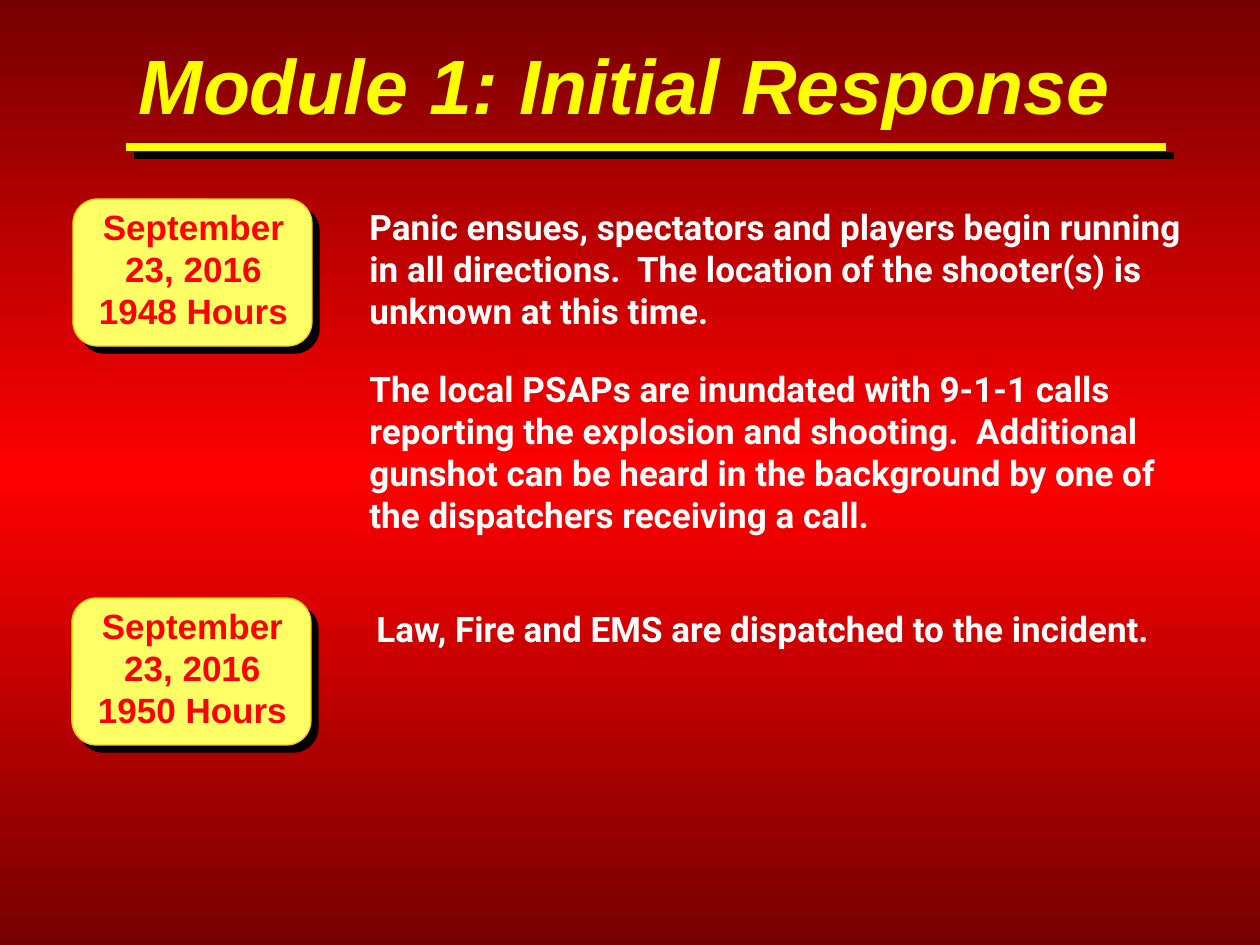
from copy import deepcopy

from lxml import etree
from pptx import Presentation
from pptx.dml.color import RGBColor
from pptx.enum.shapes import MSO_CONNECTOR, MSO_SHAPE
from pptx.enum.text import MSO_AUTO_SIZE, PP_ALIGN
from pptx.oxml.ns import qn
from pptx.util import Pt

LINE = MSO_CONNECTOR.STRAIGHT
ROUND = MSO_SHAPE.ROUNDED_RECTANGLE
GROW = MSO_AUTO_SIZE.SHAPE_TO_FIT_TEXT
LEFT, CENTER = PP_ALIGN.LEFT, PP_ALIGN.CENTER

DARK = RGBColor(0x76, 0x00, 0x00)
RED = RGBColor(0xFF, 0x00, 0x00)
YELLOW = RGBColor(0xFF, 0xFF, 0x00)
CREAM = RGBColor(0xFF, 0xFF, 0x66)
GOLD = RGBColor(0xFF, 0xCC, 0x00)
WHITE = RGBColor(0xFF, 0xFF, 0xFF)

HEAD = {"name": "Arial", "size": Pt(44), "bold": True, "italic": True}
DATE = {"name": "Arial", "size": Pt(20), "bold": True}
BODY = {"name": "Roboto", "size": Pt(20), "bold": True}
GAP = Pt(20.5)

EVENTS = [
    ((73, 199, 239, 147), ["September ", "23, 2016", "1948 Hours"],
     (357, 199, 850, 374),
     ["Panic ensues, spectators and players begin running in all directions.  "
      "The location of the shooter(s) is unknown at this time.",
      "The local PSAPs are inundated with 9-1-1 calls reporting the explosion "
      "and shooting.  Additional gunshot can be heard in the background by one "
      "of the dispatchers receiving a call."]),
    ((72, 598, 239, 147), ["September ", "23, 2016", "1950 Hours"],
     (364, 601, 850, 55),
     ["Law, Fire and EMS are dispatched to the incident."]),
]


def px(n):
    return round(n * 914400 / 126)


def cast(shape, dist):
    props = shape._element.spPr
    for old in props.findall(qn("a:effectLst")):
        props.remove(old)
    list_ = etree.SubElement(props, qn("a:effectLst"))
    shade = etree.SubElement(list_, qn("a:outerShdw"), dist=str(px(dist)),
                             dir="2700000", algn="ctr", rotWithShape="0")
    etree.SubElement(shade, qn("a:srgbClr"), val="000000")


def write(shapes, box, lines, font, color, align=LEFT, wrap=True, gap=0):
    frame = shapes.add_textbox(*map(px, box)).text_frame
    frame.word_wrap = wrap
    frame.auto_size = GROW
    for i, line in enumerate(lines):
        para = frame.paragraphs[0] if i == 0 else frame.add_paragraph()
        para.alignment = align
        para.space_before = gap if i else 0
        run = para.add_run()
        run.text = line
        for key, value in font.items():
            setattr(run.font, key, value)
        run.font.color.rgb = color


def paint(slide):
    fill = slide.background.fill
    fill.gradient()
    fill.gradient_angle = 270
    stops = slide.element.find(".//" + qn("a:gsLst"))
    stops.append(deepcopy(stops[-1]))
    for stop, (place, color) in zip(fill.gradient_stops,
                                    [(0, DARK), (0.5, RED), (1, DARK)]):
        stop.position = place
        stop.color.rgb = color


def title(shapes, box, text):
    x, y, w, h = box
    write(shapes, box, [text], HEAD, YELLOW, CENTER)
    ends = (x + 63, y + 116, x + w - 21, y + 116)
    rule = shapes.add_connector(LINE, *map(px, ends))
    rule.line.color.rgb = YELLOW
    rule.line.width = Pt(4.5)
    cast(rule, 12)


def badge(shapes, box, lines):
    x, y, w, h = box
    group = shapes.add_group_shape().shapes
    card = group.add_shape(ROUND, *map(px, box))
    card.fill.solid()
    card.fill.fore_color.rgb = CREAM
    card.line.color.rgb = GOLD
    card.line.width = Pt(0.75)
    cast(card, 10)
    write(group, (x + 13, y, w - 24, h - 7), lines, DATE, RED, CENTER, False)


def main():
    deck = Presentation()
    deck.slide_width, deck.slide_height = px(1260), px(945)
    slide = deck.slides.add_slide(deck.slide_layouts[6])
    paint(slide)
    title(slide.shapes, (63, 31, 1124, 105), "Module 1: Initial Response")
    for card, date, box, lines in EVENTS:
        badge(slide.shapes, card, date)
        write(slide.shapes, box, lines, BODY, WHITE, gap=GAP)
    deck.save("out.pptx")


if __name__ == "__main__":
    main()
